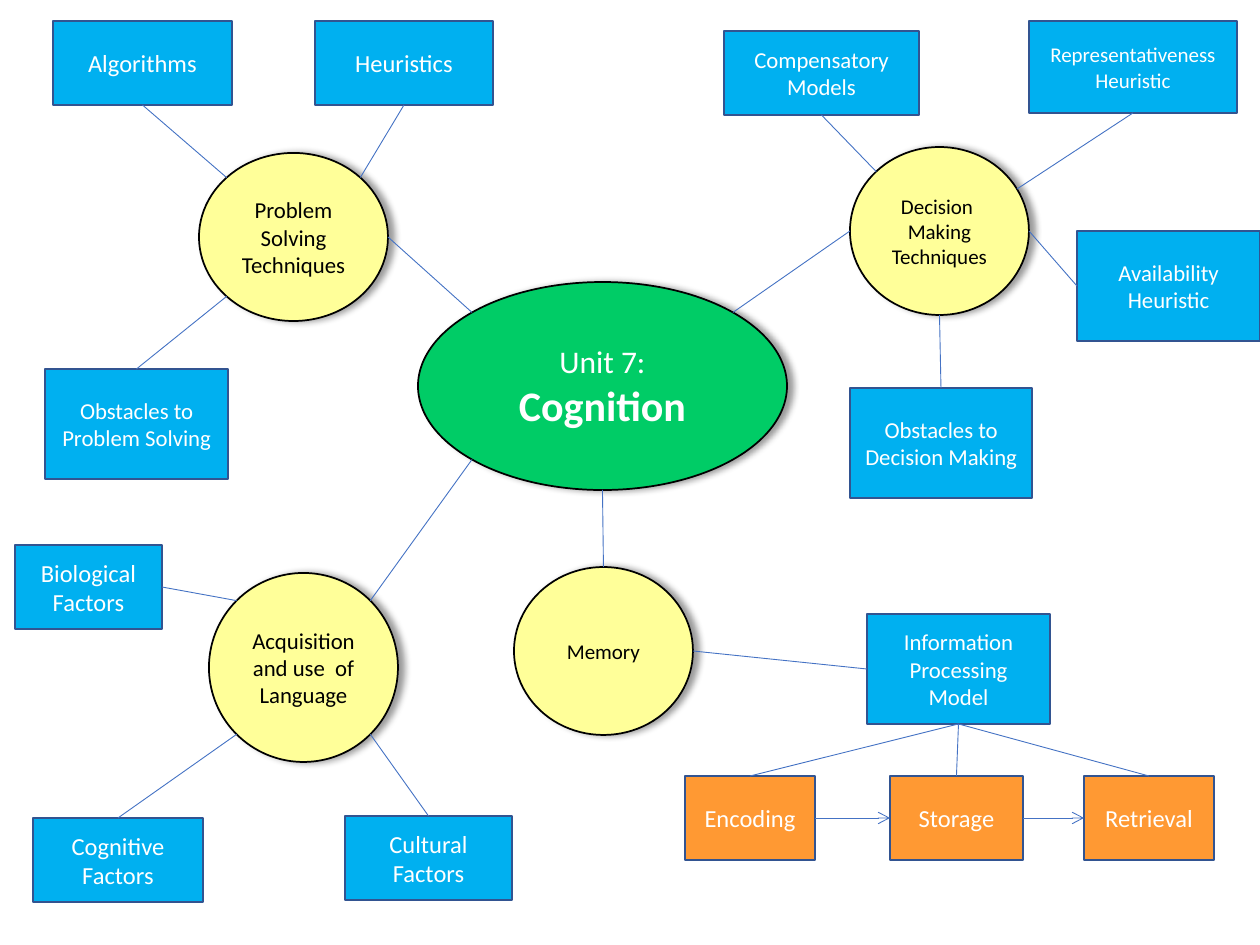
import math
from dataclasses import dataclass

import lxml.etree
import pptx
import pptx.dml.color
import pptx.enum.shapes
import pptx.enum.text
import pptx.oxml.ns
import pptx.util

EMU_PER_PX = 914400 / 126
DIAGONAL = math.sqrt(0.5)

# Unit directions from the middle of a node to its edge
SIDES = {
    "top": (0, -1), "left": (-1, 0), "bottom": (0, 1), "right": (1, 0),
    "top_left": (-DIAGONAL, -DIAGONAL), "top_right": (DIAGONAL, -DIAGONAL),
    "bottom_left": (-DIAGONAL, DIAGONAL), "bottom_right": (DIAGONAL, DIAGONAL),
    "upper_right": (math.cos(math.pi / 6), -0.5),
}
# Connection sites in the order in which the preset shapes number them
RECTANGLE_SITES = ["top", "left", "bottom", "right"]
ELLIPSE_SITES = ["top", "top_left", "left", "bottom_left",
                 "bottom", "bottom_right", "right", "top_right"]


@dataclass(frozen=True)
class Theme:
    font: str = "Calibri"
    unit: str = "00CC66"
    topic: str = "FFFF99"
    concept: str = "00B0F0"
    stage: str = "FF9933"
    dark: str = "000000"
    light: str = "FFFFFF"
    border: str = "325491"
    link: str = "4472C4"
    title_size: int = 24
    unit_size: int = 18
    large: int = 14
    medium: int = 13
    small: int = 12
    border_width: float = 1
    link_width: float = 0.5


THEME = Theme()

TOPICS = {
    "problem": ("Problem Solving Techniques", (199, 153, 189, 168), THEME.medium),
    "decision": ("Decision  Making Techniques", (850, 147, 179, 168), THEME.small),
    "language": ("Acquisition and use  of Language", (209, 573, 189, 189), THEME.medium),
    "memory": ("Memory", (514, 567, 179, 168), THEME.small),
}
CONCEPTS = {
    "algorithms": ("Algorithms", (53, 21, 179, 84), THEME.large),
    "heuristics": ("Heuristics", (315, 21, 178, 84), THEME.large),
    "problem_obstacles": ("Obstacles to Problem Solving", (45, 369, 183, 110), THEME.medium),
    "compensatory": ("Compensatory Models", (724, 31, 195, 84), THEME.medium),
    "representativeness": ("Representativeness Heuristic", (1029, 21, 208, 92), THEME.small),
    "availability": ("Availability Heuristic", (1077, 231, 183, 110), THEME.medium),
    "decision_obstacles": ("Obstacles to Decision Making", (850, 388, 182, 110), THEME.medium),
    "biological": ("Biological Factors", (15, 545, 147, 84), THEME.large),
    "cognitive": ("Cognitive Factors", (33, 818, 170, 84), THEME.large),
    "cultural": ("Cultural Factors", (345, 816, 167, 84), THEME.large),
    "processing": ("Information Processing Model", (867, 614, 183, 110), THEME.medium),
}
STAGES = {
    "encoding": ("Encoding", (685, 776, 130, 84), THEME.large),
    "storage": ("Storage", (890, 776, 133, 84), THEME.large),
    "retrieval": ("Retrieval", (1084, 776, 130, 84), THEME.large),
}
LINKS = [
    ("problem", "right", "unit", "top_left"),
    ("unit", "top_right", "decision", "left"),
    ("language", "top_right", "unit", "bottom_left"),
    ("unit", "bottom", "memory", "top"),
    ("algorithms", "bottom", "problem", "top_left"),
    ("heuristics", "bottom", "problem", "top_right"),
    ("problem_obstacles", "top", "problem", "bottom_left"),
    ("decision", "top_left", "compensatory", "bottom"),
    ("decision", "upper_right", "representativeness", "bottom"),
    ("decision", "right", "availability", "left"),
    ("decision_obstacles", "top", "decision", "bottom"),
    ("biological", "right", "language", "top_left"),
    ("language", "bottom_left", "cognitive", "top"),
    ("language", "bottom_right", "cultural", "top"),
    ("processing", "left", "memory", "right"),
] + [("processing", "bottom", stage, "top") for stage in STAGES]
FLOW = [("encoding", "storage"), ("storage", "retrieval")]


def px(length):
    return pptx.util.Emu(round(length * EMU_PER_PX))


def color(value):
    return pptx.dml.color.RGBColor.from_string(value)


def add_xml(parent, tag, **attributes):
    return lxml.etree.SubElement(parent, pptx.oxml.ns.qn(tag), attributes)


def add_node(slide, preset, box, fill, border, lines, text_color):
    """Draw a node; lines holds one (text, size, bold) per paragraph."""
    node = slide.shapes.add_shape(preset, *map(px, box))
    node.fill.solid()
    node.fill.fore_color.rgb = color(fill)
    node.line.color.rgb = color(border)
    node.line.width = pptx.util.Pt(THEME.border_width)
    node.shadow.inherit = False
    frame = node.text_frame
    frame.word_wrap = True
    frame.vertical_anchor = pptx.enum.text.MSO_ANCHOR.MIDDLE
    for index, (text, size, bold) in enumerate(lines):
        paragraph = frame.add_paragraph() if index else frame.paragraphs[0]
        paragraph.alignment = pptx.enum.text.PP_ALIGN.CENTER
        run = paragraph.add_run()
        run.text = text
        run.font.name = THEME.font
        run.font.size = pptx.util.Pt(size)
        run.font.bold = bold
        run.font.color.rgb = color(text_color)
    return node


def add_ellipse(slide, box, fill, lines, text_color):
    ellipse = add_node(slide, pptx.enum.shapes.MSO_SHAPE.OVAL, box,
                       fill, THEME.dark, lines, text_color)
    effects = ellipse._element.spPr.find(pptx.oxml.ns.qn("a:effectLst"))
    shadow = add_xml(effects, "a:outerShdw", blurRad=str(pptx.util.Pt(4)),
                     dist=str(pptx.util.Pt(3)), dir="0", algn="l", rotWithShape="0")
    shade = add_xml(shadow, "a:srgbClr", val=THEME.dark)
    add_xml(shade, "a:alpha", val="40000")
    return ellipse


def add_box(slide, box, fill, lines):
    return add_node(slide, pptx.enum.shapes.MSO_SHAPE.RECTANGLE, box,
                    fill, THEME.border, lines, THEME.light)


def edge_point(node, side):
    across, down = SIDES[side]
    return (round(node.left + node.width * (1 + across) / 2),
            round(node.top + node.height * (1 + down) / 2))


def add_link(slide, start, start_side, end, end_side, arrow=False):
    """Join two nodes, attached wherever the side is a connection site."""
    link = slide.shapes.add_connector(
        pptx.enum.shapes.MSO_CONNECTOR.STRAIGHT,
        *edge_point(start, start_side), *edge_point(end, end_side))
    link.line.color.rgb = color(THEME.link)
    link.line.width = pptx.util.Pt(THEME.link_width)
    if arrow:
        add_xml(link.line._get_or_add_ln(), "a:tailEnd", type="arrow")
    add_xml(link._element.spPr, "a:effectLst")
    attachments = link._element.nvCxnSpPr.cNvCxnSpPr
    for tag, node, side in (("a:stCxn", start, start_side), ("a:endCxn", end, end_side)):
        is_ellipse = node.auto_shape_type == pptx.enum.shapes.MSO_SHAPE.OVAL
        sites = ELLIPSE_SITES if is_ellipse else RECTANGLE_SITES
        if side in sites:
            add_xml(attachments, tag, id=str(node.shape_id), idx=str(sites.index(side)))


def main():
    presentation = pptx.Presentation()
    presentation.slide_width, presentation.slide_height = px(1260), px(945)
    slide = presentation.slides.add_slide(presentation.slide_layouts[6])

    nodes = {"unit": add_ellipse(
        slide, (418, 282, 369, 208), THEME.unit,
        [("Unit 7:", THEME.unit_size, False), ("Cognition", THEME.title_size, True)],
        THEME.light)}
    for key, (text, box, size) in TOPICS.items():
        nodes[key] = add_ellipse(slide, box, THEME.topic, [(text, size, False)], THEME.dark)
    for group, fill in ((CONCEPTS, THEME.concept), (STAGES, THEME.stage)):
        for key, (text, box, size) in group.items():
            nodes[key] = add_box(slide, box, fill, [(text, size, False)])

    for start, start_side, end, end_side in LINKS:
        add_link(slide, nodes[start], start_side, nodes[end], end_side)
    for start, end in FLOW:
        add_link(slide, nodes[start], "right", nodes[end], "left", arrow=True)

    presentation.save("out.pptx")


if __name__ == "__main__":
    main()
